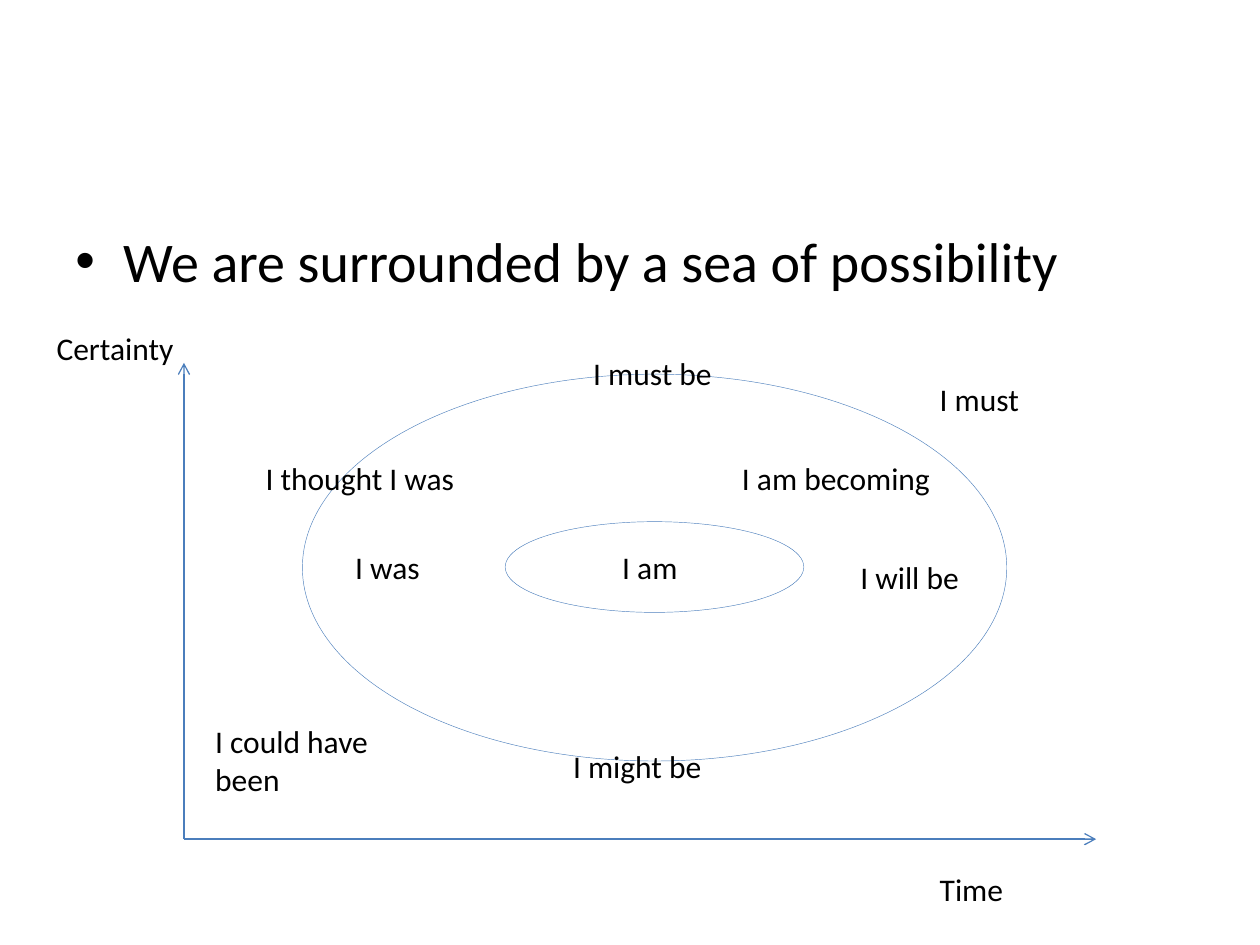
import pptx
import pptx.util
import pptx.dml.color
import pptx.enum.shapes
import pptx.oxml
import pptx.oxml.ns
from pptx.util import Inches

LABELS = [
    ("Certainty", -1.11, -0.32, 1.65, 0.4),
    ("Time", 5.9, 3.98, 1.57, 0.4),
    ("I am", 3.38, 1.42, 1.1, 0.4),
    ("I will be", 5.27, 1.5, 1.1, 0.4),
    ("I was", 1.26, 1.42, 1.1, 0.4),
    ("I could have been", 0.15, 2.8, 1.73, 0.71),
    ("I must be", 3.15, -0.12, 1.5, 0.4),
    ("I might be", 2.99, 3.0, 1.5, 0.4),
    ("I am becoming", 4.33, 0.71, 2.05, 0.4),
    ("I must", 5.9, 0.09, 1.42, 0.4),
    ("I thought I was", 0.55, 0.71, 2.0, 0.4),
]
RINGS = [(0.94, 0.09, 5.59, 3.07), (2.55, 1.26, 2.37, 0.72)]


def color(value):
    """Turn a hex string into a colour."""
    return pptx.dml.color.RGBColor.from_string(value)


def add_node(parent, tag, **attrs):
    """Append a drawing element to a parent and return it."""
    node = pptx.oxml.parse_xml(f"<a:{tag} {pptx.oxml.ns.nsdecls('a')}/>")
    for key, value in attrs.items():
        node.set(key, value)
    parent.append(node)
    return node


def add_text(slide, text, left, top, width, height, size):
    """Add a wrapped text box and return its paragraph."""
    box = slide.shapes.add_textbox(
        Inches(left), Inches(top), Inches(width), Inches(height))
    box.text_frame.word_wrap = True
    para = box.text_frame.paragraphs[0]
    para.text = text
    font = para.runs[0].font
    font.name = "Calibri"
    font.size = pptx.util.Pt(size)
    font.color.rgb = color("000000")
    return para


def add_bullet(slide, text, left, top, width, height):
    """Add the bulleted statement."""
    para = add_text(slide, text, left, top, width, height, 32)
    para.space_before = pptx.util.Pt(6.4)
    props = para._p.get_or_add_pPr()
    props.set("marL", str(Inches(0.38)))
    props.set("indent", str(Inches(-0.38)))
    add_node(props, "buFont", typeface="Arial")
    add_node(props, "buChar", char="•")


def add_axis(slide, left, top, right, bottom):
    """Add an axis line with an arrowhead at its far end."""
    axis = slide.shapes.add_connector(
        pptx.enum.shapes.MSO_CONNECTOR.STRAIGHT,
        Inches(left), Inches(top), Inches(right), Inches(bottom))
    axis.line.color.rgb = color("4B7EBC")
    axis.line.width = pptx.util.Pt(0.75)
    add_node(axis.line._get_or_add_ln(), "tailEnd", type="arrow")
    add_node(axis._element.spPr, "effectLst")


def add_ring(slide, left, top, width, height):
    """Add a thinly outlined white ellipse."""
    ring = slide.shapes.add_shape(
        pptx.enum.shapes.MSO_SHAPE.OVAL,
        Inches(left), Inches(top), Inches(width), Inches(height))
    ring.shadow.inherit = False
    ring.fill.solid()
    ring.fill.fore_color.rgb = color("FFFFFF")
    ring.line.color.rgb = color("4F81BD")
    ring.line.width = pptx.util.Pt(0.25)


def add_map(slide, left, top, width, height):
    """Add the axes, rings and labels of the possibility map."""
    base = top + height
    add_axis(slide, left, base, left + width, base)
    add_axis(slide, left, base, left, top)
    for x, y, wide, high in RINGS:
        add_ring(slide, left + x, top + y, wide, high)
    for text, x, y, wide, high in LABELS:
        add_text(slide, text, left + x, top + y, wide, high, 18)


def main():
    """Build and save the slide."""
    deck = pptx.Presentation()
    deck.slide_width = Inches(10)
    deck.slide_height = Inches(7.5)
    slide = deck.slides.add_slide(deck.slide_layouts[6])
    add_bullet(slide, "We are surrounded by a sea of possibility",
               0.5, 1.75, 9, 4.95)
    add_map(slide, 1.46, 2.88, 7.24, 3.78)
    deck.save("out.pptx")


if __name__ == "__main__":
    main()
